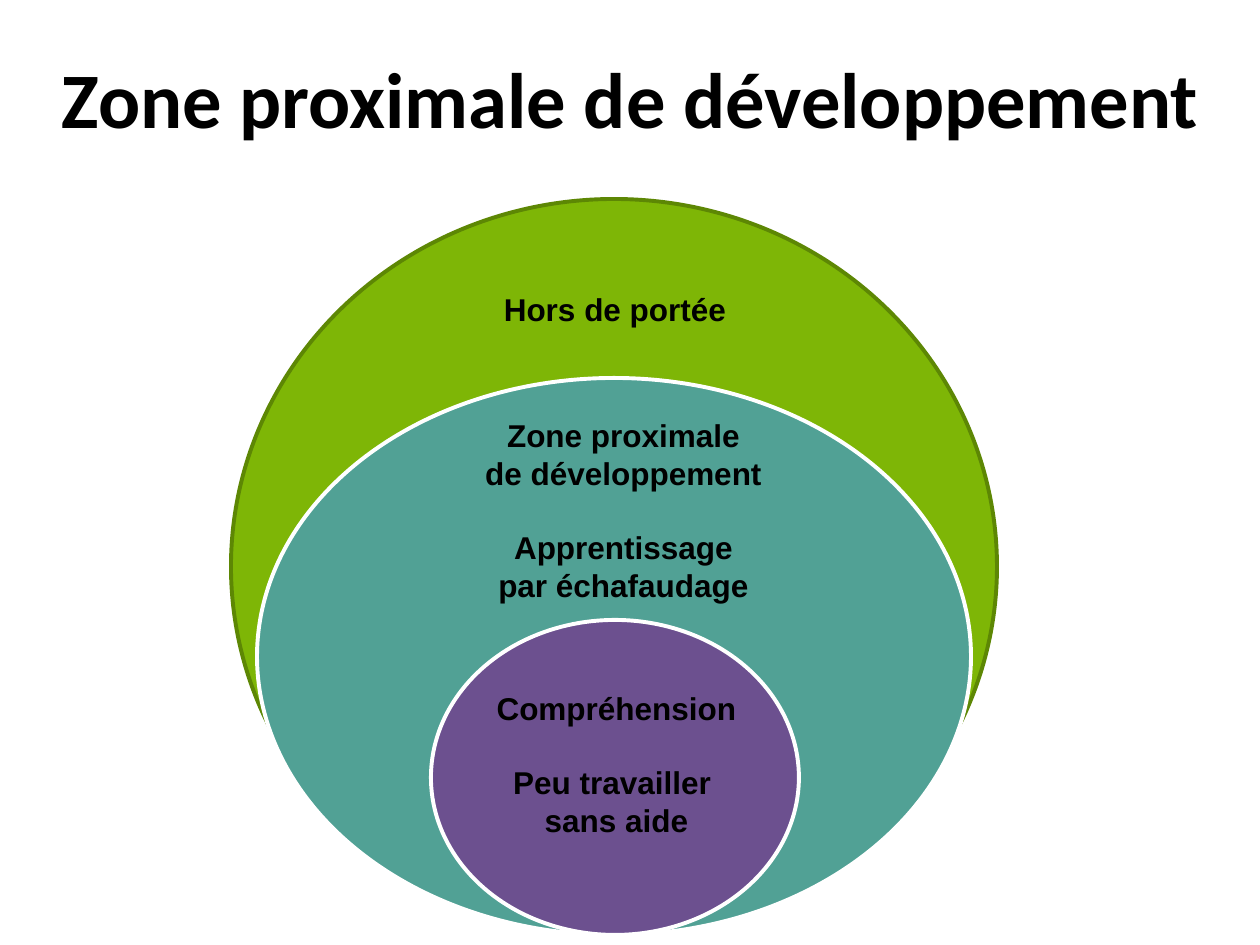
import pptx
import pptx.dml.color
import pptx.enum.shapes
import pptx.enum.text
import pptx.util

PX = 914400 / 126
BLACK = "000000"
TITLE_FORMAT = {"name": "Calibri", "size": pptx.util.Pt(44.9), "bold": True}
LABEL_FORMAT = {"name": "Arial", "size": pptx.util.Pt(18), "bold": True}
LABEL_LINE = pptx.util.Pt(20.7)

# (left, top, width, height), fill, outline
ZONES = [
    ((231, 199, 766, 735), "7EB606", "5D8704"),
    ((257, 378, 714, 557), "51A195", "FFFFFF"),
    ((431, 620, 368, 315), "6C508F", "FFFFFF"),
]
# (left, top, width, height), groups of lines set one blank line apart
LABELS = [
    ((368, 284, 494, 50), [["Hors de portée"]]),
    ((469, 410, 309, 204), [["Zone proximale", "de développement"],
                            ["Apprentissage", "par échafaudage"]]),
    ((483, 683, 267, 165), [["Compréhension"],
                            ["Peu travailler ", "sans aide"]]),
]


def emu(*lengths):
    return [round(length * PX) for length in lengths]


def colour(hex_string):
    return pptx.dml.color.RGBColor.from_string(hex_string)


def add_text(page, box, groups, font_format):
    """Place centred lines, with one line of space between groups."""
    frame = page.shapes.add_textbox(*emu(*box)).text_frame
    frame.word_wrap = True
    frame.margin_left = frame.margin_right = 0
    para = None
    for group_index, lines in enumerate(groups):
        for line_index, line in enumerate(lines):
            para = frame.add_paragraph() if para else frame.paragraphs[0]
            para.alignment = pptx.enum.text.PP_ALIGN.CENTER
            if group_index and not line_index:
                para.space_before = LABEL_LINE
            span = para.add_run()
            span.text = line
            span.font.color.rgb = colour(BLACK)
            for name, value in font_format.items():
                setattr(span.font, name, value)


def add_zones(page, box):
    """Draw the nested ellipses as one group, offset from the box corner."""
    left, top = box
    group = page.shapes.add_group_shape()
    for (x, y, width, height), fill, outline in ZONES:
        ellipse = group.shapes.add_shape(
            pptx.enum.shapes.MSO_SHAPE.OVAL,
            *emu(left + x, top + y, width, height))
        ellipse.shadow.inherit = False
        ellipse.fill.solid()
        ellipse.fill.fore_color.rgb = colour(fill)
        ellipse.line.color.rgb = colour(outline)
        ellipse.line.width = pptx.util.Pt(2.25)


def add_labels(page, box):
    left, top = box
    for (x, y, width, height), groups in LABELS:
        add_text(page, (left + x, top + y, width, height), groups, LABEL_FORMAT)


def main():
    deck = pptx.Presentation()
    deck.slide_width, deck.slide_height = emu(1260, 945)
    page = deck.slides.add_slide(deck.slide_layouts[6])
    add_text(page, (0, 44, 1260, 108),
             [["Zone proximale de développement"]], TITLE_FORMAT)
    add_zones(page, (0, 0))
    add_labels(page, (0, 0))
    deck.save("out.pptx")


if __name__ == "__main__":
    main()
